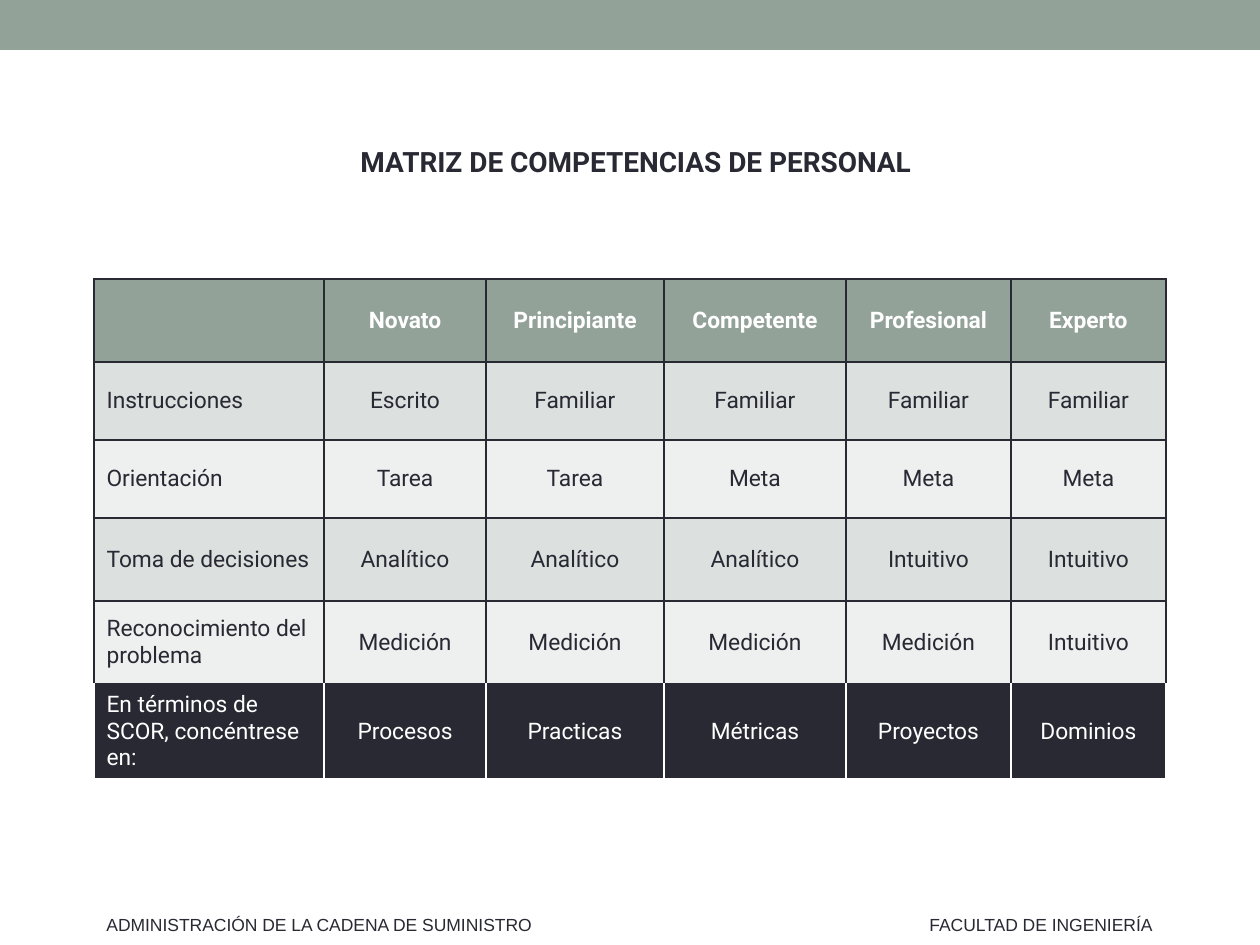
from pptx import Presentation
from pptx.dml.color import RGBColor as Rgb
from pptx.enum.shapes import MSO_SHAPE as Shape
from pptx.enum.text import MSO_ANCHOR as Anchor, MSO_AUTO_SIZE as Fit, PP_ALIGN as Align
from pptx.oxml import parse_xml
from pptx.oxml.ns import nsdecls
from pptx.util import Emu, Pt

theme = {
    "sage": "93A299", "ink": "292934", "white": "FFFFFF",
    "odd": "DCE0DE", "even": "EEF0EF",
    "head": 16, "cell": 13, "foot": 10,
    "main": "Roboto", "plain": "Arial",
}


def px(num):
    return Emu(round(num * 914400 / 126))


def write(para, text, size, color, face="main", bold=False):
    run = para.add_run()
    run.text = text
    font = run.font
    font.name = theme[face]
    font.size = Pt(theme[size])
    font.bold = bold
    font.color.rgb = Rgb.from_string(theme[color])


deck = Presentation()
deck.slide_width, deck.slide_height = px(1260), px(945)
slide = deck.slides.add_slide(deck.slide_layouts[1])
shapes = slide.shapes
title = shapes.title.element
title.getparent().remove(title)

# Top band
band = shapes.add_shape(Shape.RECTANGLE, 0, 0, px(1260), px(50))
band.shadow.inherit = False
band.fill.solid()
band.fill.fore_color.rgb = Rgb.from_string(theme["sage"])
band.line.fill.background()

# Heading in the body placeholder
body = slide.placeholders[1]
body.left, body.top, body.width, body.height = px(105), px(121), px(1062), px(759)
frame = body.text_frame
frame.auto_size = Fit.NONE
para = frame.paragraphs[0]
para.alignment = Align.CENTER
para.line_spacing = 1.5
para.space_before, para.space_after = Pt(0), Pt(12)
props = para._p.get_or_add_pPr()
props.set("marL", "0")
props.set("indent", "0")
props.append(parse_xml(f"<a:buNone {nsdecls('a')}/>"))
write(para, "MATRIZ DE COMPETENCIAS DE PERSONAL", "head", "ink", bold=True)

# Footers
for left, width, text in [
    (94, 457, "ADMINISTRACIÓN DE LA CADENA DE SUMINISTRO"),
    (917, 255, "FACULTAD DE INGENIERÍA"),
]:
    box = shapes.add_textbox(px(left), px(908), px(width), px(34))
    box.text_frame.word_wrap = False
    box.text_frame.auto_size = Fit.SHAPE_TO_FIT_TEXT
    write(box.text_frame.paragraphs[0], text, "foot", "ink", "plain")

# Skill matrix: fill, text colour and words of each row
rows = [
    ("sage", "white", ["", "Novato", "Principiante", "Competente", "Profesional", "Experto"]),
    ("odd", "ink", ["Instrucciones", "Escrito"] + ["Familiar"] * 4),
    ("even", "ink", ["Orientación"] + ["Tarea"] * 2 + ["Meta"] * 3),
    ("odd", "ink", ["Toma de decisiones"] + ["Analítico"] * 3 + ["Intuitivo"] * 2),
    ("even", "ink", ["Reconocimiento del problema"] + ["Medición"] * 4 + ["Intuitivo"]),
    ("ink", "white", ["En términos de SCOR, concéntrese en:", "Procesos", "Practicas",
                      "Métricas", "Proyectos", "Dominios"]),
]
wide = [230, 162, 178, 182, 165, 155]
tall = [83, 78, 78, 83, 83, 94]
table = shapes.add_table(len(rows), len(wide), px(94), px(279),
                         px(sum(wide)), px(sum(tall))).table
for col, width in zip(table.columns, wide):
    col.width = px(width)
for row, height in zip(table.rows, tall):
    row.height = px(height)

for i, (fill, color, words) in enumerate(rows):
    last = i == len(rows) - 1
    for j, word in enumerate(words):
        cell = table.cell(i, j)
        cell.vertical_anchor = Anchor.MIDDLE
        cell.fill.solid()
        cell.fill.fore_color.rgb = Rgb.from_string(theme[fill])
        para = cell.text_frame.paragraphs[0]
        if j:
            para.alignment = Align.CENTER
        if word:
            write(para, word, "cell", color, bold=i == 0)

        # Borders: white in the last row, except on its top side
        props = cell._tc.get_or_add_tcPr()
        for k, side in enumerate("LRTB"):
            edge = theme["white" if last and side != "T" else "ink"]
            props.insert(k, parse_xml(
                f'<a:ln{side} {nsdecls("a")} w="{Pt(1)}"><a:solidFill>'
                f'<a:srgbClr val="{edge}"/></a:solidFill></a:ln{side}>'))

deck.save("out.pptx")
